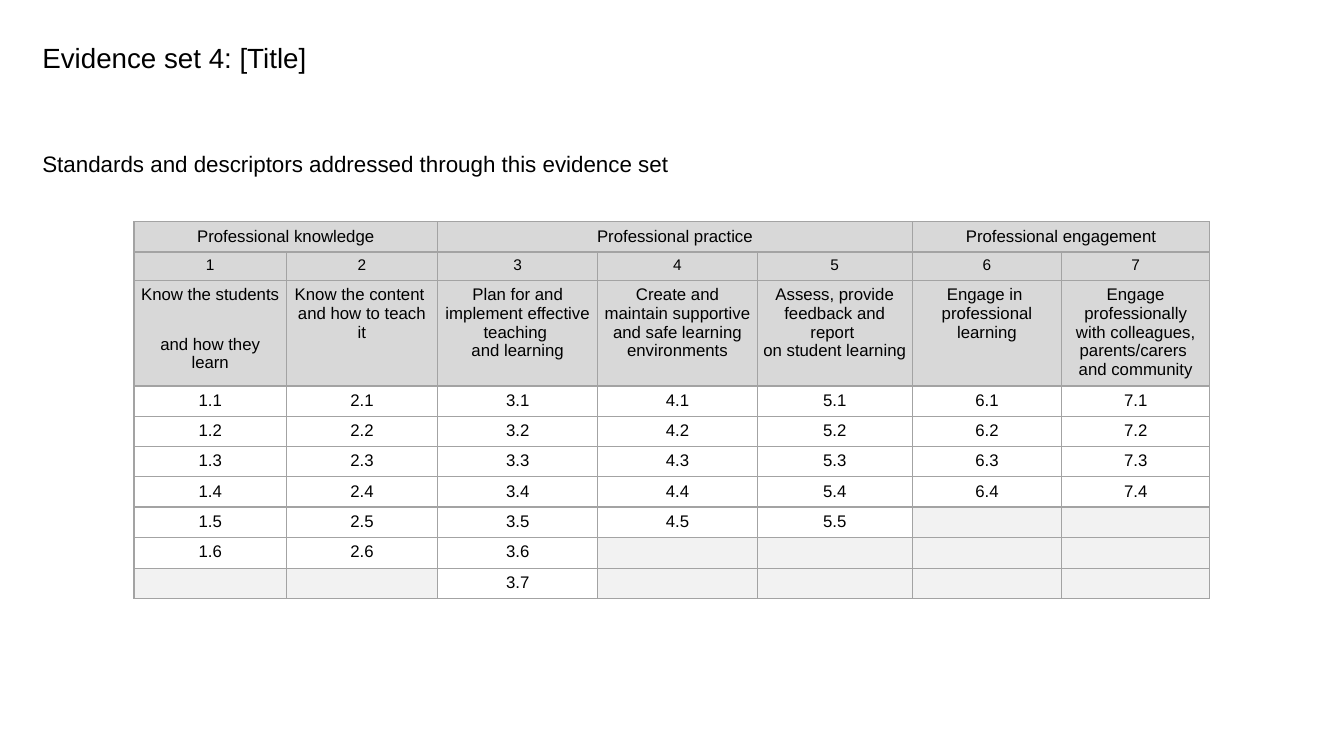
from lxml import etree
from pptx import Presentation, util as u
from pptx.dml.color import RGBColor
from pptx.enum import text
from pptx.oxml.ns import qn

BLACK = RGBColor(0x00, 0x00, 0x00)
HEADER_GREY = RGBColor(0xD8, 0xD8, 0xD8)
EMPTY_GREY = RGBColor(0xF2, 0xF2, 0xF2)
BORDER_GREY = RGBColor(0xA3, 0xA3, 0xA3)

TITLE = "Evidence set 4: [Title]"
SUBTITLE = "Standards and descriptors addressed through this evidence set"
DOMAINS = [  # name, number of standards
    ("Professional knowledge", 2),
    ("Professional practice", 3),
    ("Professional engagement", 2),
]
STANDARDS = [  # name, number of descriptors, column width
    ("Know the students \vand how they learn", 6, 1.51),
    ("Know the content \vand how to teach it", 6, 1.5),
    ("Plan for and implement effective teaching \vand learning", 7, 1.59),
    ("Create and maintain supportive and safe learning environments", 5, 1.58),
    ("Assess, provide feedback and report \von student learning", 5, 1.54),
    ("Engage in \vprofessional learning", 4, 1.48),
    ("Engage professionally with colleagues, parents/carers \vand community", 4, 1.47),
]
HEADER_HEIGHTS = [0.3, 0.28, 1.05]
DESCRIPTOR_HEIGHT = 0.3
TABLE_LEFT, TABLE_TOP = 1.33, 2.2
CELL_FORMAT = {
    "margin_left": u.Inches(0.06),
    "margin_right": u.Inches(0.06),
    "margin_top": u.Inches(0.05),
    "margin_bottom": u.Inches(0.05),
}


def set_attributes(target, values):
    for name, value in values.items():
        setattr(target, name, value)


def format_font(font, size):
    set_attributes(font, {"name": "Arial", "size": u.Pt(size)})
    font.color.rgb = BLACK


def fill_placeholder(placeholder, wording, box, size, margin_top):
    set_attributes(placeholder, dict(zip(("left", "top", "width", "height"), map(u.Inches, box))))
    frame = placeholder.text_frame
    frame.text = wording
    set_attributes(frame, {
        "vertical_anchor": text.MSO_ANCHOR.TOP,
        "auto_size": text.MSO_AUTO_SIZE.NONE,
        "word_wrap": True,
        "margin_top": u.Inches(margin_top),
    })
    line = frame.paragraphs[0]
    set_attributes(line, {
        "alignment": text.PP_ALIGN.LEFT,
        "line_spacing": 0.9,
        "space_before": u.Pt(0),
    })
    format_font(line.runs[0].font, size)
    return line


def remove_bullet(line):
    properties = line._p.get_or_add_pPr()
    properties.set("marL", "0")
    properties.set("indent", "0")
    etree.SubElement(properties, qn("a:buNone"))


def add_borders(cell):
    properties = cell._tc.get_or_add_tcPr()
    for side in ("lnL", "lnR", "lnT", "lnB"):
        border = etree.SubElement(properties, qn(f"a:{side}"), w=str(u.Pt(1)))
        solid = etree.SubElement(border, qn("a:solidFill"))
        etree.SubElement(solid, qn("a:srgbClr"), val=str(BORDER_GREY))


def write_cell(cell, wording, fill=None, size=12):
    set_attributes(cell, CELL_FORMAT)
    add_borders(cell)
    if fill is None:
        cell.fill.background()
    else:
        cell.fill.solid()
        cell.fill.fore_color.rgb = fill
    line = cell.text_frame.paragraphs[0]
    line.alignment = text.PP_ALIGN.CENTER
    if wording:
        cell.text_frame.text = wording
        line = cell.text_frame.paragraphs[0]
        line.alignment = text.PP_ALIGN.CENTER
        for run in line.runs:
            format_font(run.font, size)
    else:
        # An empty cell keeps its row low only with a small end-of-paragraph size
        etree.SubElement(line._p, qn("a:endParaRPr"), sz=str(size * 100))


def add_standards_table(slide):
    most = max(count for _, count, _ in STANDARDS)
    heights = HEADER_HEIGHTS + [DESCRIPTOR_HEIGHT] * most
    widths = [width for _, _, width in STANDARDS]
    table = slide.shapes.add_table(
        len(heights), len(widths), u.Inches(TABLE_LEFT), u.Inches(TABLE_TOP),
        u.Inches(sum(widths)), u.Inches(sum(heights))).table
    set_attributes(table, {"first_row": False, "horz_banding": False})
    for row, height in zip(table.rows, heights):
        row.height = u.Inches(height)

    first = 0
    for domain, span in DOMAINS:
        for col in range(first, first + span):
            write_cell(table.cell(0, col), domain if col == first else "", HEADER_GREY)
        table.cell(0, first).merge(table.cell(0, first + span - 1))
        first += span

    for col, (standard, count, width) in enumerate(STANDARDS):
        table.columns[col].width = u.Inches(width)
        write_cell(table.cell(1, col), str(col + 1), HEADER_GREY, 11)
        write_cell(table.cell(2, col), standard, HEADER_GREY)
        for number in range(1, most + 1):
            cell = table.cell(len(HEADER_HEIGHTS) + number - 1, col)
            if number <= count:
                write_cell(cell, f"{col + 1}.{number}")
            else:
                write_cell(cell, "", EMPTY_GREY)


def main():
    deck = Presentation()
    set_attributes(deck, {"slide_width": u.Inches(13.33), "slide_height": u.Inches(7.5)})
    slide = deck.slides.add_slide(deck.slide_layouts[1])
    fill_placeholder(slide.shapes.title, TITLE, (0.32, 0.39, 11.5, 0.75), 19.8, 0.05)
    subtitle = fill_placeholder(slide.placeholders[1], SUBTITLE, (0.32, 1, 12.7, 6.1), 16, 0.52)
    remove_bullet(subtitle)
    add_standards_table(slide)
    deck.save("out.pptx")


if __name__ == "__main__":
    main()
